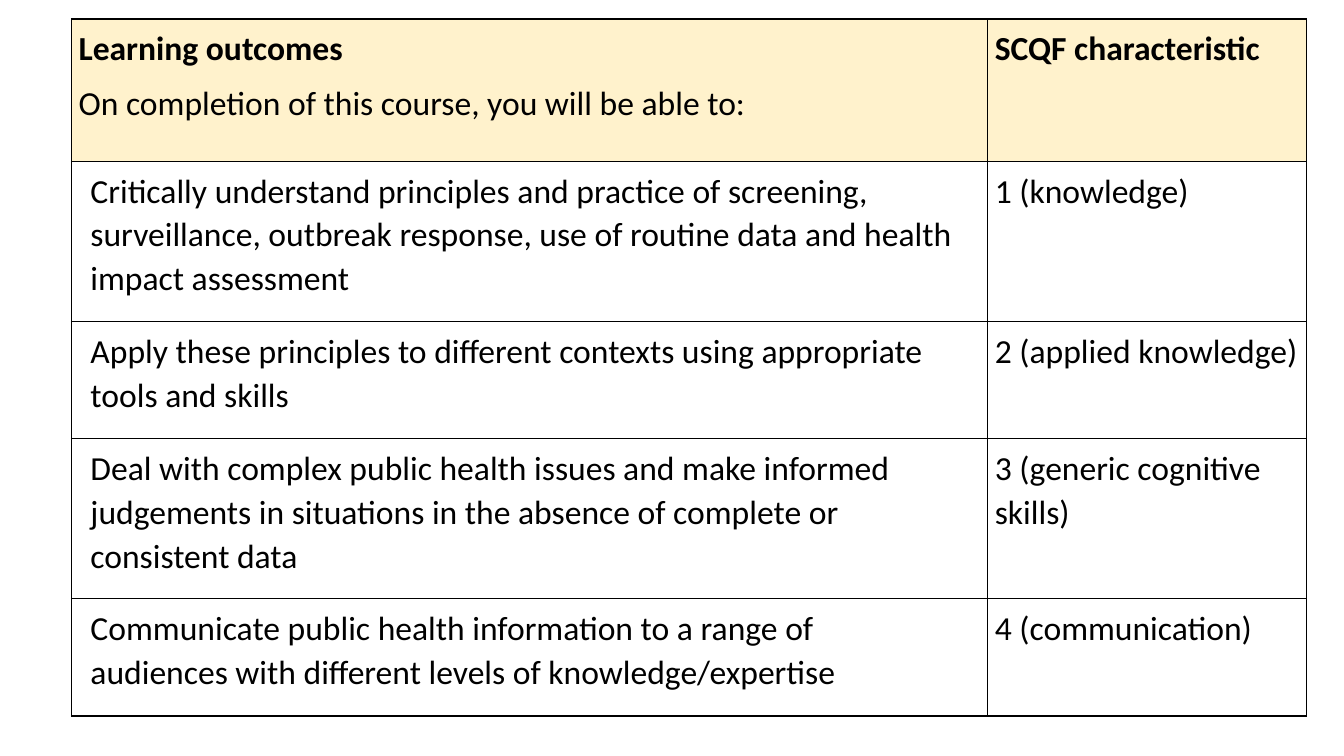
import pptx
import pptx.dml.color
import pptx.oxml
import pptx.oxml.ns
import pptx.util
from pptx.util import Cm, Pt

# Content: each row holds the paragraphs of its two cells
HEADER = (
    ["Learning outcomes", "On completion of this course, you will be able to:"],
    ["SCQF characteristic"],
)
OUTCOMES = [
    (["Critically understand principles and practice of screening,",
      "surveillance, outbreak response, use of routine data and health impact assessment"],
     ["1 (knowledge)"]),
    (["Apply these principles to different contexts using appropriate tools and skills"],
     ["2 (applied knowledge)"]),
    (["Deal with complex public health issues and make informed",
      "judgements in situations in the absence of complete or",
      "consistent data"],
     ["3 (generic cognitive skills)"]),
    (["Communicate public health information to a range of",
      "audiences with different levels of knowledge/expertise"],
     ["4 (communication)"]),
]
COLUMN_WIDTHS = [23.09, 8.03]
ROW_HEIGHTS = [3.58, 4.04, 2.95, 4.04, 2.95]
HEADER_FILL = "FFF2CC"
INK = "000000"


def color(hex_string):
    return pptx.dml.color.RGBColor.from_string(hex_string)


def add_borders(cell):
    properties = cell._tc.get_or_add_tcPr()
    for side in ("lnL", "lnR", "lnT", "lnB"):
        properties.append(pptx.oxml.parse_xml(
            f'<a:{side} {pptx.oxml.ns.nsdecls("a")} w="{Pt(1)}"><a:solidFill>'
            f'<a:srgbClr val="{INK}"/></a:solidFill></a:{side}>'))


def fill_cell(cell, texts, is_header, is_outcome):
    cell.margin_left = cell.margin_right = Cm(0.18)
    cell.margin_top = cell.margin_bottom = Cm(0.18)
    add_borders(cell)
    if is_header:
        cell.fill.solid()
        cell.fill.fore_color.rgb = color(HEADER_FILL)
    else:
        cell.fill.background()

    frame = cell.text_frame
    frame.text = "\n".join(texts)
    for index, paragraph in enumerate(frame.paragraphs):
        paragraph.line_spacing = 1.07
        paragraph.space_after = Pt(0 if is_outcome else 8)
        if is_outcome:
            paragraph._p.get_or_add_pPr().set("marL", str(Cm(0.3)))
        font = paragraph.font
        font.name = "Calibri"
        font.size = Pt(24)
        font.bold = is_header and index == 0
        font.color.rgb = color(INK)


# Slide
presentation = pptx.Presentation()
presentation.slide_width = Cm(33.87)
presentation.slide_height = Cm(19.05)
slide = presentation.slides.add_slide(presentation.slide_layouts[6])

# Table
rows = [HEADER] + OUTCOMES
table = slide.shapes.add_table(
    len(rows), len(COLUMN_WIDTHS), Cm(1.8), Cm(0.48),
    Cm(sum(COLUMN_WIDTHS)), Cm(sum(ROW_HEIGHTS))).table
table.horz_banding = False
for column, width in zip(table.columns, COLUMN_WIDTHS):
    column.width = Cm(width)
for row, height in zip(table.rows, ROW_HEIGHTS):
    row.height = Cm(height)

# Cells
for row_index, row_texts in enumerate(rows):
    is_header = row_index == 0
    for column_index, texts in enumerate(row_texts):
        fill_cell(table.cell(row_index, column_index), texts,
                  is_header, not is_header and column_index == 0)

presentation.save("out.pptx")
